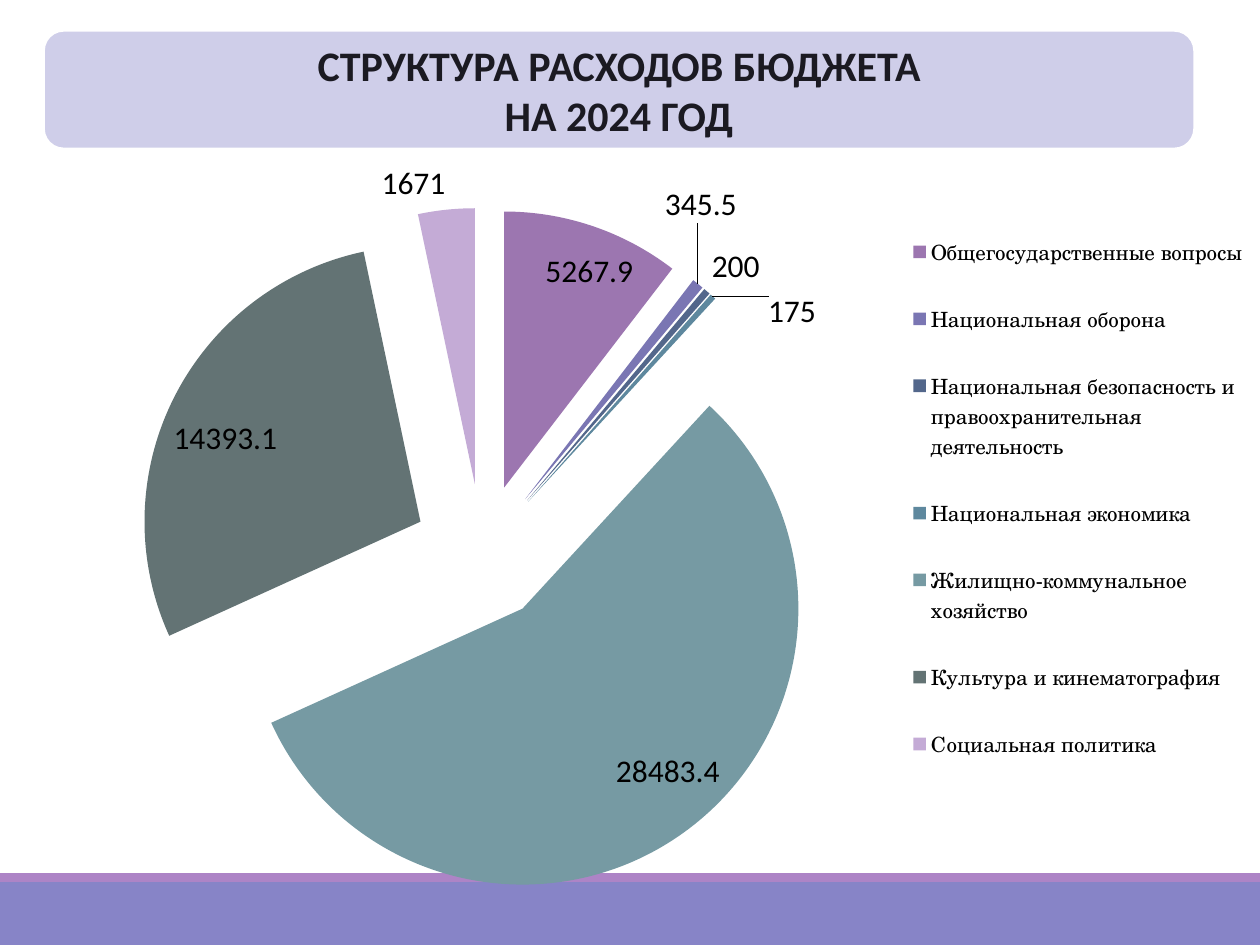
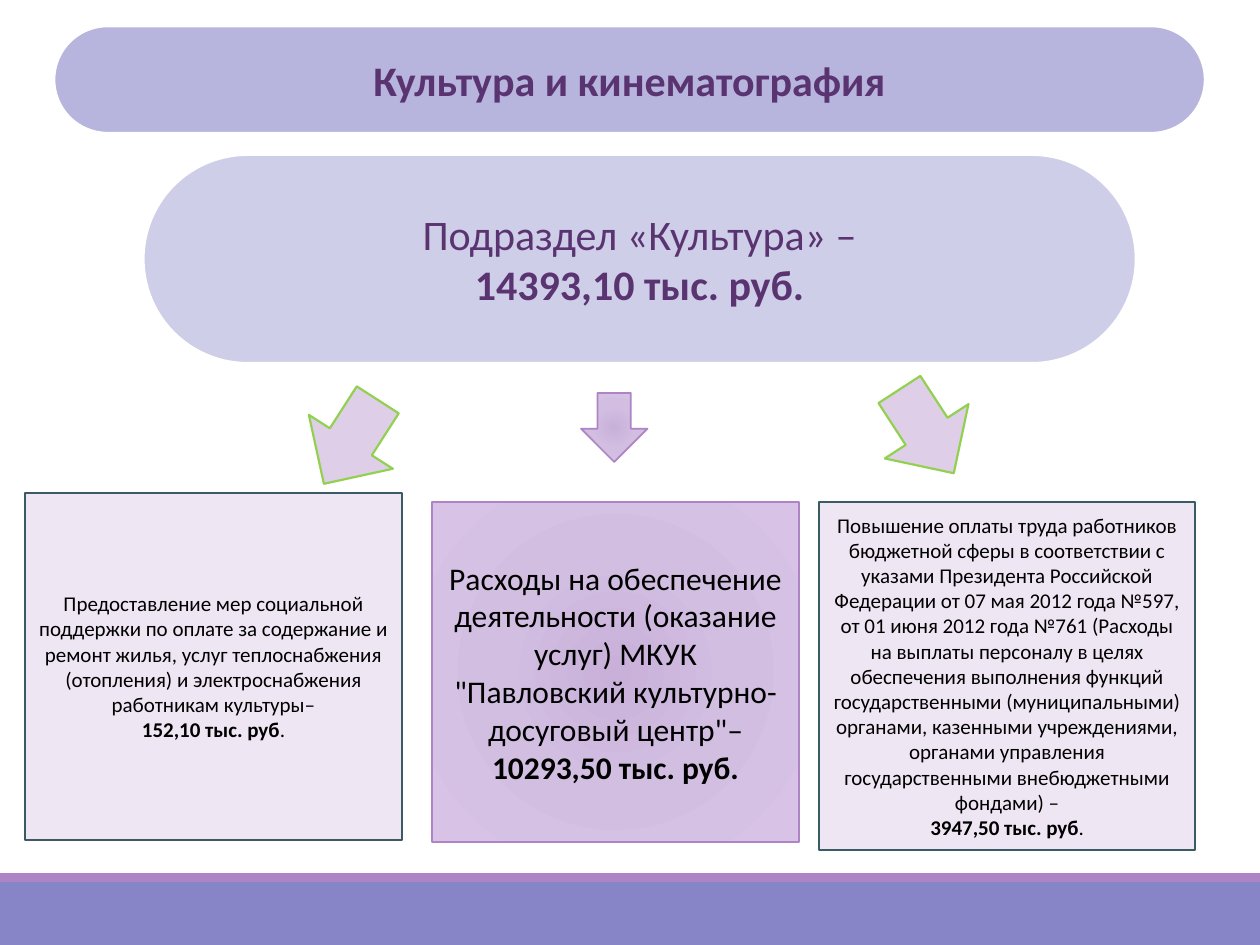
import pptx
import pptx.chart.data
import pptx.dml.color
import pptx.enum.chart
import pptx.enum.shapes
import pptx.enum.text
import pptx.oxml
import pptx.oxml.ns
import pptx.util
from dataclasses import dataclass
from lxml import etree

Pt = pptx.util.Pt
Kind = pptx.enum.shapes.MSO_SHAPE


@dataclass(frozen=True)
class Theme:
    font: str = "Calibri"
    serif: str = "TeX Gyre Schola"
    big: int = 24
    mid: int = 18
    small: int = 12
    white: str = "FFFFFF"
    black: str = "000000"
    ink: str = "1B1A22"
    plum: str = "5A3471"
    violet: str = "8784C7"
    lilac: str = "AD84C6"
    head: str = "B7B5DD"
    pale: str = "CFCEE9"
    card: str = "EFE6F4"
    edge: str = "3A5B63"
    arrow: str = "DECEE8"
    green: str = "92D050"
    glow: tuple = ((0, "C8B0D9"), (45, "D2BEE1"), (100, "D8C3E7"))
    slices: tuple = ("9C76B0", "7A76B3", "53678B", "5E889E",
                     "769AA3", "637374", "C4ABD6")


THEME = Theme()

COSTS = (
    ("Общегосударственные вопросы", 5267.9),
    ("Национальная оборона", 345.5),
    ("Национальная безопасность и правоохранительная деятельность", 200),
    ("Национальная экономика", 175),
    ("Жилищно-коммунальное хозяйство", 28483.4),
    ("Культура и кинематография", 14393.1),
    ("Социальная политика", 1671),
)


def tint(code):
    return pptx.dml.color.RGBColor.from_string(code)


def set_glow(shape):
    stops = "".join(
        f'<a:gs pos="{at * 1000}"><a:srgbClr val="{code}"/></a:gs>'
        for at, code in THEME.glow)
    grad = pptx.oxml.parse_xml(
        f'<a:gradFill {pptx.oxml.ns.nsdecls("a")} rotWithShape="1">'
        f'<a:gsLst>{stops}</a:gsLst><a:path path="circle">'
        '<a:fillToRect l="50000" t="50000" r="50000" b="50000"/>'
        '</a:path></a:gradFill>')
    shape.fill.gradient()
    old = shape._element.spPr.find(pptx.oxml.ns.qn("a:gradFill"))
    old.getparent().replace(old, grad)


def add_form(slide, kind, box, fill, line=None, width=1.25, turn=0):
    shape = slide.shapes.add_shape(kind, *map(Pt, box))
    shape.shadow.inherit = False
    shape.rotation = turn
    if fill == THEME.glow:
        set_glow(shape)
    else:
        shape.fill.solid()
        shape.fill.fore_color.rgb = tint(fill)
    if line:
        shape.line.color.rgb = tint(line)
        shape.line.width = Pt(width)
    else:
        shape.line.fill.background()
    return shape


def add_text(shape, lines, size, color):
    frame = shape.text_frame
    frame.word_wrap = True
    frame.vertical_anchor = pptx.enum.text.MSO_ANCHOR.MIDDLE
    for index, runs in enumerate(lines):
        para = frame.paragraphs[0] if index == 0 else frame.add_paragraph()
        para.alignment = pptx.enum.text.PP_ALIGN.CENTER
        para.font.name = THEME.font
        para.font.size = Pt(size)
        para.font.color.rgb = tint(color)
        for text, bold in runs:
            run = para.add_run()
            run.text = text
            run.font.bold = bold


def add_pill(slide, box, fill, lines, color, round_by=0.5):
    shape = add_form(slide, Kind.ROUNDED_RECTANGLE, box, fill, THEME.white)
    shape.adjustments[0] = round_by
    add_text(shape, lines, THEME.big, color)


def add_card(slide, box, lines):
    shape = add_form(slide, Kind.RECTANGLE, box, THEME.card, THEME.edge)
    add_text(shape, lines, THEME.small, THEME.black)


def add_page(deck):
    slide = deck.slides.add_slide(deck.slide_layouts[6])
    add_form(slide, Kind.RECTANGLE, (0, 504, 720, 36), THEME.violet)
    add_form(slide, Kind.RECTANGLE, (0, 499, 720, 5), THEME.lilac)
    return slide


def set_place(parent, left, top, wide=None, high=None, inner=False):
    layout = parent.get_or_add_layout() if hasattr(
        parent, "get_or_add_layout") else parent.find(
        pptx.oxml.ns.qn("c:layout"))
    if layout is None:
        layout = etree.Element(pptx.oxml.ns.qn("c:layout"))
        marks = [pptx.oxml.ns.qn("c:legendPos"), pptx.oxml.ns.qn("c:idx")]
        spot = next((i + 1 for i, kid in enumerate(parent)
                     if kid.tag in marks), 0)
        parent.insert(spot, layout)
    for kid in list(layout):
        layout.remove(kid)
    manual = etree.SubElement(layout, pptx.oxml.ns.qn("c:manualLayout"))
    parts = [("layoutTarget", "inner")] if inner else []
    if wide:
        parts += [("xMode", "edge"), ("yMode", "edge")]
    parts += [("x", left), ("y", top)]
    if wide:
        parts += [("w", wide), ("h", high)]
    for name, value in parts:
        etree.SubElement(manual, pptx.oxml.ns.qn("c:" + name)).set(
            "val", str(value))


def set_font(font, name, size):
    font.name = name
    font.size = Pt(size)
    font.color.rgb = tint(THEME.black)


def add_pie(slide, box):
    data = pptx.chart.data.CategoryChartData()
    data.categories = [name for name, cost in COSTS]
    data.add_series("Series 1", [cost for name, cost in COSTS])
    chart = slide.shapes.add_chart(
        pptx.enum.chart.XL_CHART_TYPE.PIE, *map(Pt, box), data).chart
    set_font(chart.font, THEME.font, THEME.mid)
    chart.has_title = False
    chart.has_legend = True
    chart.legend.position = pptx.enum.chart.XL_LEGEND_POSITION.RIGHT
    chart.legend.include_in_layout = False
    set_font(chart.legend.font, THEME.serif, THEME.small)
    plot = chart.plots[0]
    plot.vary_by_categories = True
    pie = plot.series[0]
    for index, code in enumerate(THEME.slices):
        fill = pie.points[index].format.fill
        fill.solid()
        fill.fore_color.rgb = tint(code)
    burst = etree.Element(pptx.oxml.ns.qn("c:explosion"))
    burst.set("val", "25")
    pie._element.find(pptx.oxml.ns.qn("c:dPt")).addprevious(burst)
    labels = pie.data_labels
    labels.show_value = True
    labels.position = pptx.enum.chart.XL_LABEL_POSITION.BEST_FIT
    set_font(labels.font, THEME.font, THEME.mid)
    for index, left, top in ((1, -0.03, -0.07), (3, 0.04, 0.05)):
        label = pie.points[index].data_label
        label.position = pptx.enum.chart.XL_LABEL_POSITION.BEST_FIT
        set_place(label._dLbl, left, top)
    area = chart._chartSpace.chart.plotArea
    set_place(area, 0.105, 0.08, 0.55, 0.88, True)
    set_place(chart.legend._element, 0.715, 0.07, 0.28, 0.76)


def build_costs(deck):
    slide = add_page(deck)
    add_pie(slide, (3, 83, 717, 448))
    add_pill(slide, (25, 17.5, 657.5, 67.5), THEME.pale,
             [[("СТРУКТУРА РАСХОДОВ БЮДЖЕТА", True)],
              [("НА 2024 ГОД", True)]], THEME.ink, 0.17)


def build_culture(deck):
    slide = add_page(deck)
    add_pill(slide, (31, 15, 657.5, 61), THEME.head,
             [[("Культура и кинематография", True)]], THEME.plum)
    add_pill(slide, (82, 88.5, 567, 119), THEME.pale,
             [[("Подраздел «Культура» –", False)],
              [("14393,10 тыс. руб.", True)]], THEME.plum)
    for left, top, turn in ((172, 224, 32.7), (501, 218, 327)):
        add_form(slide, Kind.DOWN_ARROW, (left, top, 57, 57), THEME.arrow,
                 THEME.green, turn=turn)
    add_card(slide, (14.5, 281.5, 215, 198.5), [
        [("Предоставление мер социальной поддержки по оплате за содержание "
          "и ремонт жилья, услуг теплоснабжения (отопления) и "
          "электроснабжения работникам культуры–", False)],
        [("152,10 тыс. руб", True), (".", False)]])
    add_card(slide, (468, 287, 215, 198.5), [
        [("Повышение оплаты труда работников бюджетной сферы в соответствии "
          "с указами Президента Российской Федерации от 07 мая 2012 года "
          "№597, от 01 июня 2012 года №761 (Расходы на выплаты персоналу в "
          "целях обеспечения выполнения функций государственными "
          "(муниципальными) органами, казенными учреждениями, органами "
          "управления государственными внебюджетными фондами) –", False)],
        [("3947,50 тыс. руб", True), (".", False)]])
    centre = add_form(slide, Kind.RECTANGLE, (247, 287, 209.5, 194),
                      THEME.glow, THEME.lilac, 1)
    add_text(centre, [
        [("Расходы на обеспечение деятельности (оказание услуг) МКУК "
          "\"Павловский культурно-досуговый центр\"–", False),
         ("10293,50 тыс. руб.", True)]], THEME.mid, THEME.black)
    add_form(slide, Kind.DOWN_ARROW, (332, 224.5, 38, 39.5), THEME.glow,
             THEME.lilac, 1)


def main():
    deck = pptx.Presentation()
    deck.slide_width = Pt(720)
    deck.slide_height = Pt(540)
    build_costs(deck)
    build_culture(deck)
    deck.save("out.pptx")


if __name__ == "__main__":
    main()
